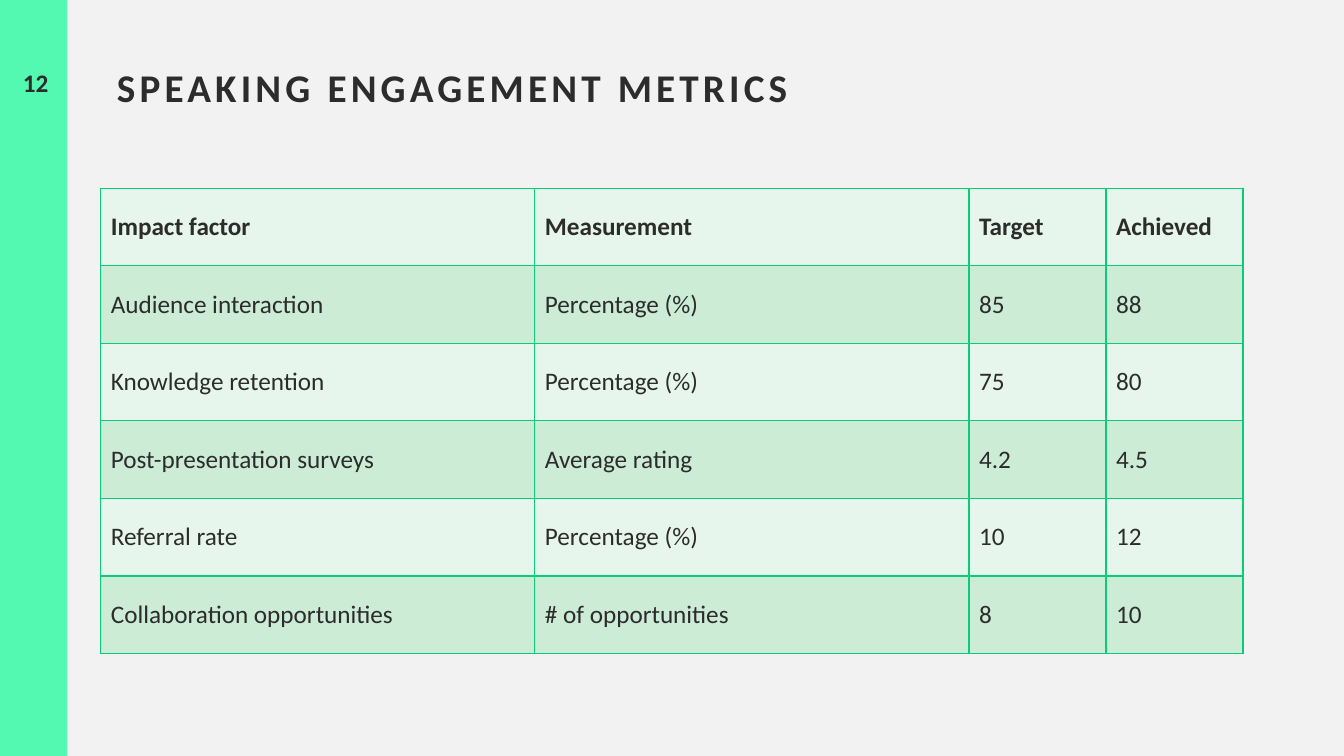
from dataclasses import dataclass

from lxml import etree
from pptx import Presentation
from pptx import util as u
from pptx.dml.color import RGBColor
from pptx.enum import shapes, text
from pptx.oxml.ns import qn


@dataclass(frozen=True)
class Theme:
    font: str = "Calibri"
    ink: str = "2C2C2C"
    background: str = "F2F2F2"
    accent: str = "53F8B1"
    border: str = "08CC78"
    bands: tuple = ("E7F6EC", "CCECD6")
    title_size: int = 28
    body_size: int = 18
    title_spacing: int = 3
    border_width: int = 1


THEME = Theme()

# Square grid: 40 columns by 22.5 rows
GRID = u.Inches(1) / 3
COLUMNS, ROWS = 40, 22.5

COLUMN_SHARES = (0.38, 0.38, 0.12, 0.12)
METRICS = (
    ("Impact factor", "Measurement", "Target", "Achieved"),
    ("Audience interaction", "Percentage (%)", "85", "88"),
    ("Knowledge retention", "Percentage (%)", "75", "80"),
    ("Post-presentation surveys", "Average rating", "4.2", "4.5"),
    ("Referral rate", "Percentage (%)", "10", "12"),
    ("Collaboration opportunities", "# of opportunities", "8", "10"),
)


def grid(*units):
    return [round(unit * GRID) for unit in units]


def paint(fill, color):
    fill.solid()
    fill.fore_color.rgb = RGBColor.from_string(color)


def write(frame, words, size, bold=False, align=text.PP_ALIGN.LEFT):
    frame.text = words
    paragraph = frame.paragraphs[0]
    paragraph.alignment = align
    font = paragraph.font
    font.name, font.size, font.bold = THEME.font, u.Pt(size), bold
    font.color.rgb = RGBColor.from_string(THEME.ink)
    return paragraph


def add_sidebar(slide, number):
    bar = slide.shapes.add_shape(shapes.MSO_SHAPE.RECTANGLE, *grid(0, 0, 2, ROWS))
    bar.shadow.inherit = False
    bar.line.fill.background()
    paint(bar.fill, THEME.accent)

    box = slide.shapes.add_textbox(*grid(0.06, 1.86, 2, 1.2))
    box.text_frame.word_wrap = True
    write(box.text_frame, number, THEME.body_size, True, text.PP_ALIGN.CENTER)


def add_title(slide, words):
    title = slide.shapes.title
    title.left, title.top, title.width, title.height = grid(3.18, 2, 33.8, 3.5)
    frame = title.text_frame
    paragraph = write(frame, words, THEME.title_size, bold=True)
    frame.vertical_anchor = text.MSO_ANCHOR.TOP
    frame.auto_size = text.MSO_AUTO_SIZE.NONE
    paragraph.line_spacing = 0.8
    # Letter spacing is stored in hundredths of a point
    run_properties = paragraph.runs[0].font._element
    run_properties.set("spc", str(THEME.title_spacing * 100))


def set_borders(cell):
    properties = cell._tc.get_or_add_tcPr()
    for index, side in enumerate(("a:lnL", "a:lnR", "a:lnT", "a:lnB")):
        line = etree.Element(qn(side), w=str(u.Pt(THEME.border_width)))
        fill = etree.SubElement(line, qn("a:solidFill"))
        etree.SubElement(fill, qn("a:srgbClr"), val=THEME.border)
        properties.insert(index, line)


def add_metrics_table(slide, left, top, width, row_height):
    height = row_height * len(METRICS)
    frame = slide.shapes.add_table(
        len(METRICS), len(COLUMN_SHARES), *grid(left, top, width, height))
    table = frame.table
    for column, share in zip(table.columns, COLUMN_SHARES):
        column.width = grid(width * share)[0]

    for row_index, values in enumerate(METRICS):
        table.rows[row_index].height = grid(row_height)[0]
        for column_index, value in enumerate(values):
            cell = table.cell(row_index, column_index)
            cell.vertical_anchor = text.MSO_ANCHOR.MIDDLE
            write(cell.text_frame, value, THEME.body_size, bold=row_index == 0)
            paint(cell.fill, THEME.bands[row_index % 2])
            set_borders(cell)


def main():
    presentation = Presentation()
    presentation.slide_width, presentation.slide_height = grid(COLUMNS, ROWS)
    title_only = presentation.slide_layouts[5]
    slide = presentation.slides.add_slide(title_only)
    paint(slide.background.fill, THEME.background)

    add_sidebar(slide, "12")
    add_title(slide, "SPEAKING ENGAGEMENT METRICS")
    add_metrics_table(slide, left=3, top=5.6, width=34, row_height=2.31)
    presentation.save("out.pptx")


if __name__ == "__main__":
    main()
